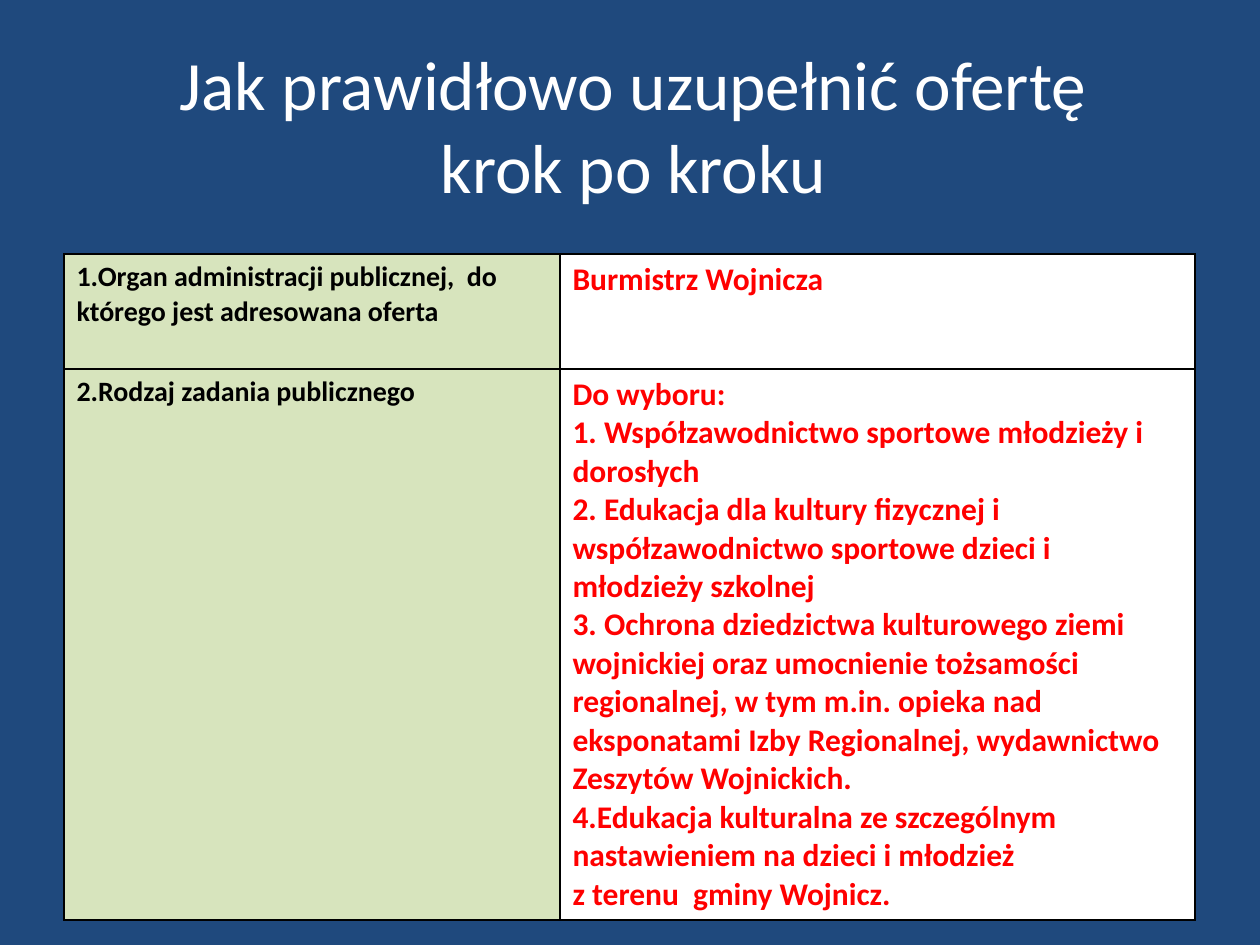
from lxml import etree
from pptx import Presentation
from pptx.dml.color import RGBColor
from pptx.enum.text import MSO_ANCHOR, PP_ALIGN
from pptx.oxml.ns import qn
from pptx.util import Pt

MIDDLE = MSO_ANCHOR.MIDDLE
TOP = MSO_ANCHOR.TOP
CENTER = PP_ALIGN.CENTER
LEFT = PP_ALIGN.LEFT
SCALE = 914400 / 126
FONT = "Calibri"
COLORS = {
    "back": "1F497D",
    "white": "FFFFFF",
    "black": "000000",
    "red": "FF0000",
    "green": "D7E4BD",
}

TITLE = "Jak prawidłowo uzupełnić ofertę \vkrok po kroku "
TASKS = [
    "Do wyboru:",
    "1. Współzawodnictwo sportowe młodzieży i dorosłych",
    "2. Edukacja dla kultury fizycznej i współzawodnictwo sportowe "
    "dzieci i młodzieży szkolnej",
    "3. Ochrona dziedzictwa kulturowego ziemi wojnickiej oraz umocnienie "
    "tożsamości regionalnej, w tym m.in. opieka nad eksponatami Izby "
    "Regionalnej, wydawnictwo Zeszytów Wojnickich.",
    "4.Edukacja kulturalna ze szczególnym nastawieniem na dzieci i młodzież "
    "\vz terenu  gminy Wojnicz.",
]
ROWS = [
    ("1.Organ administracji publicznej,  do którego jest adresowana oferta",
     "Burmistrz Wojnicza"),
    ("2.Rodzaj zadania publicznego", "\n".join(TASKS)),
]
# fill, text colour and text size of each column
STYLES = [("green", "black", 16), ("white", "red", 18)]


def px(num):
    return round(num * SCALE)


def rgb(name):
    return RGBColor.from_string(COLORS[name])


class Page:
    def __init__(self, slide):
        self.slide = slide
        fill = slide.background.fill
        fill.solid()
        fill.fore_color.rgb = rgb("back")

    def style(self, frame, size, color, bold, align):
        for para in frame.paragraphs:
            para.alignment = align
            for run in para.runs:
                font = run.font
                font.name = FONT
                font.size = Pt(size)
                font.bold = bold
                font.color.rgb = rgb(color)

    def title(self, text, x, y, w, h):
        shape = self.slide.shapes.title
        shape.left, shape.top = px(x), px(y)
        shape.width, shape.height = px(w), px(h)
        frame = shape.text_frame
        frame.text = text
        frame.word_wrap = True
        frame.vertical_anchor = MIDDLE
        self.style(frame, 39.6, "white", False, CENTER)

    def border(self, cell):
        """Draw a thin black line on all four sides of the cell."""
        props = cell._tc.get_or_add_tcPr()
        for spot, side in enumerate(("lnL", "lnR", "lnT", "lnB")):
            line = etree.Element(qn("a:" + side), w=str(Pt(1)))
            fill = etree.SubElement(line, qn("a:solidFill"))
            etree.SubElement(fill, qn("a:srgbClr"), val=COLORS["black"])
            props.insert(spot, line)

    def table(self, rows, x, y, widths, heights):
        table = self.slide.shapes.add_table(
            len(rows), len(widths), px(x), px(y),
            px(sum(widths)), px(sum(heights))).table
        for col, width in zip(table.columns, widths):
            col.width = px(width)
        for row, height, texts in zip(table.rows, heights, rows):
            row.height = px(height)
            for cell, text, look in zip(row.cells, texts, STYLES):
                fill, color, size = look
                cell.text_frame.text = text
                cell.vertical_anchor = TOP
                cell.fill.solid()
                cell.fill.fore_color.rgb = rgb(fill)
                self.style(cell.text_frame, size, color, True, LEFT)
                self.border(cell)


def main():
    deck = Presentation()
    deck.slide_width, deck.slide_height = px(1260), px(945)
    page = Page(deck.slides.add_slide(deck.slide_layouts[5]))
    page.title(TITLE, 74, 45, 1134, 158)
    page.table(ROWS, 64, 254, (496, 635), (115, 551))
    deck.save("out.pptx")


if __name__ == "__main__":
    main()
